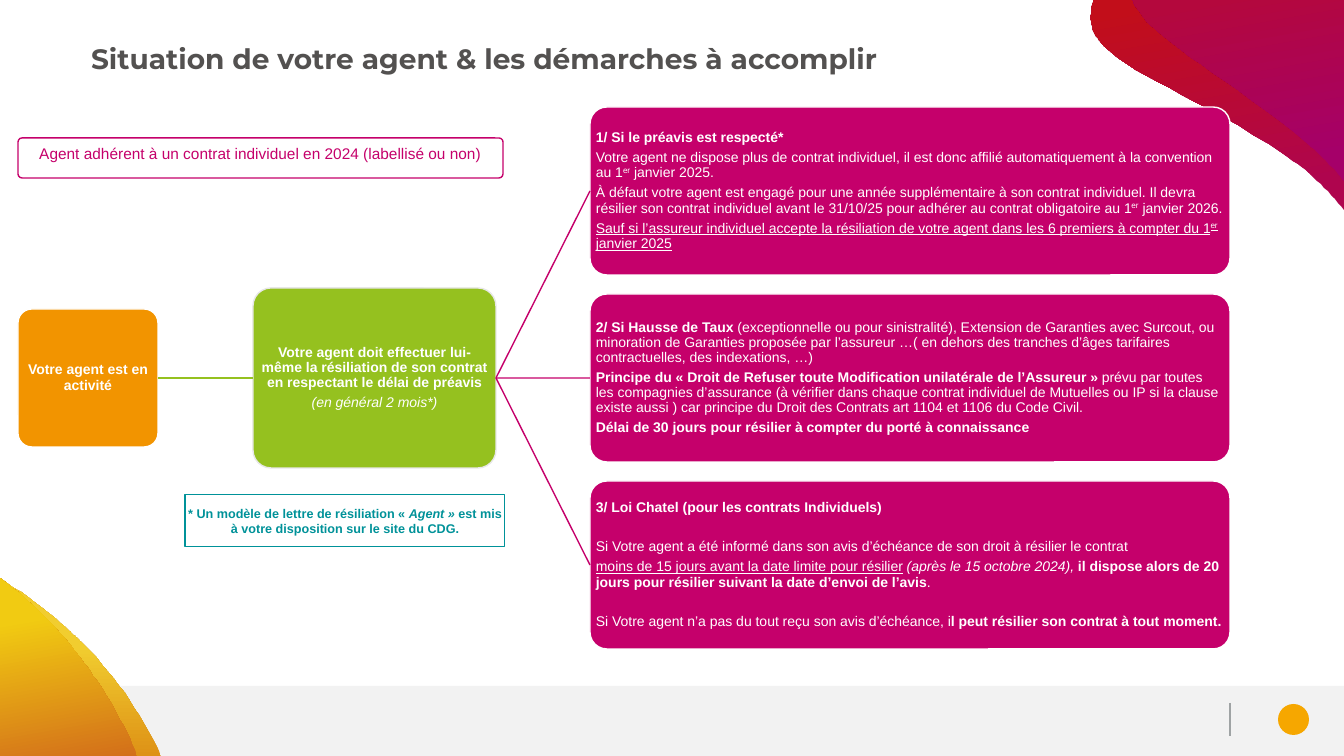
from lxml.etree import SubElement
from pptx import Presentation
from pptx.dml.color import RGBColor
from pptx.enum.shapes import MSO_CONNECTOR, MSO_SHAPE
from pptx.enum.text import MSO_ANCHOR, MSO_AUTO_SIZE, PP_ALIGN
from pptx.oxml.ns import qn
from pptx.util import Emu, Pt

SCALE = 914400 / 100.8  # EMU in one px
COLOURS = {
    "white": "FFFFFF", "title": "535150", "band": "F2F2F2", "divider": "9FA3A4",
    "orange": "F29400", "green": "95C11F", "green_edge": "E7E7E7",
    "magenta": "C5006B", "teal": "009299", "emblem": "F6A700",
    "wine": "AF054E", "red": "C20E1A", "purple": "A50069", "crimson": "B4083D",
    "amber": "DE9216", "gold": "F1CD2F", "rust": "D36F1A", "yellow": "F1CB12",
}

# Start point, Bezier segments, closing corner, gradient stops, clockwise angle
SWOOSHES = [
    ((1094, 0),
     [((1089, 17), (1091, 30), (1099, 40)),
      ((1125, 74), (1199, 96), (1285, 155)),
      ((1308, 170), (1328, 190), (1344, 210))],
     (1344, 0), (("wine", 0.13), ("red", 0.94)), 260),
    ((1133, 0),
     [((1134, 3), (1135, 6), (1137, 8)),
      ((1159, 45), (1229, 76), (1309, 145)),
      ((1322, 156), (1333, 168), (1344, 181))],
     (1344, 0), (("purple", 0.13), ("crimson", 0.94)), 260),
    ((161, 756),
     [((145, 721), (120, 681), (82, 643)),
      ((78, 639), (73, 635), (69, 631)),
      ((45, 609), (22, 592), (0, 579))],
     (0, 756), (("amber", 0), ("gold", 0.62)), 270),
    ((137, 756),
     [((125, 725), (106, 691), (79, 656)),
      ((75, 651), (72, 646), (68, 642)),
      ((45, 615), (22, 594), (0, 578))],
     (0, 756), (("rust", 0), ("yellow", 0.77)), 260),
]

# A span is (text, style): b bold, i italic, u underline, ^ superscript
ACTIVITY = [[("Votre agent est en activité", "b")]]
DUTY = [
    [("Votre agent doit effectuer lui-même la résiliation de son contrat "
      "en respectant le délai de préavis", "b")],
    [("(en général 2 mois*)", "i")],
]
NOTE = [[("* Un modèle de lettre de résiliation « ", "b"), ("Agent » ", "bi"),
         ("est mis à votre disposition sur le site du CDG.", "b")]]
LABEL = [[("Agent adhérent à un contrat individuel en 2024 (labellisé ou non)", "")]]
NOTICE_CASE = [
    [("1/ Si le préavis est respecté*", "b")],
    [("Votre agent ne dispose plus de contrat individuel, il est donc affilié "
      "automatiquement à la convention au 1", ""), ("er", "^"), (" janvier 2025.", "")],
    [("À défaut votre agent est engagé pour une année supplémentaire à son contrat "
      "individuel. Il devra résilier son contrat individuel avant le 31/10/25 pour "
      "adhérer au contrat obligatoire au 1", ""), ("er", "^"), (" janvier 2026.", "")],
    [("Sauf si l’assureur individuel accepte la résiliation de votre agent dans les "
      "6 premiers à compter du 1", "u"), ("er", "u^"), (" janvier 2025", "u")],
]
RATE_CASE = [
    [("2/ Si Hausse de Taux ", "b"),
     ("(exceptionnelle ou pour sinistralité), Extension de Garanties avec Surcout, ou "
      "minoration de Garanties proposée par l’assureur …( en dehors des tranches d’âges "
      "tarifaires contractuelles, des indexations, …)", "")],
    [("Principe du « Droit de Refuser toute Modification unilatérale de "
      "l’Assureur » ", "b"),
     ("prévu par toutes les compagnies d’assurance (à vérifier dans chaque contrat "
      "individuel de Mutuelles ou IP si la clause existe aussi ) car principe du Droit "
      "des Contrats art 1104 et 1106 du Code Civil.", "")],
    [("Délai de 30 jours pour résilier à compter du porté à connaissance", "b")],
]
CHATEL_CASE = [
    [("3/ Loi Chatel (pour les contrats Individuels)", "b")],
    [("Si Votre agent a été informé dans son avis d’échéance de son droit à résilier "
      "le contrat", "")],
    [("moins de 15 jours avant la date limite pour résilier", "u"), (" ", ""),
     ("(après le 15 octobre 2024),", "i"),
     (" il dispose alors de 20 jours pour résilier suivant la date d’envoi de l’avis", "b"),
     (".", "")],
    [("Si Votre agent n’a pas du tout reçu son avis d’échéance, i", ""),
     ("l peut résilier son contrat à tout moment.", "b")],
]
# Paragraphs, and the indexes of those set apart by a wider gap
CASES = [(NOTICE_CASE, ()), (RATE_CASE, ()), (CHATEL_CASE, (1, 3))]


def px(length):
    return Emu(round(length * SCALE))


def colour(name):
    return RGBColor.from_string(COLOURS[name])


def add_span(para, text, style, size, ink, font="Arial"):
    span = para.add_run()
    span.text = text
    span.font.name = font
    span.font.size = Pt(size)
    span.font.color.rgb = colour(ink)
    span.font.bold = "b" in style
    span.font.italic = "i" in style
    span.font.underline = "u" in style
    if "^" in style:
        span._r.get_or_add_rPr().set("baseline", "30000")


def add_box(page, bounds, fill=None, edge=None, edge_width=1, kind=MSO_SHAPE.RECTANGLE):
    box = page.shapes.add_shape(kind, *map(px, bounds))
    box.shadow.inherit = False
    if kind == MSO_SHAPE.ROUNDED_RECTANGLE:
        box.adjustments[0] = 0.1
    if fill:
        box.fill.solid()
        box.fill.fore_color.rgb = colour(fill)
    else:
        box.fill.background()
    if edge:
        box.line.color.rgb = colour(edge)
        box.line.width = Pt(edge_width)
    else:
        box.line.fill.background()
    return box


def write(box, paragraphs, size=10, ink="white", align=PP_ALIGN.CENTER, spacing=0.9,
          after=3.5, wide_gaps=(), inset=1, anchor=MSO_ANCHOR.MIDDLE):
    frame = box.text_frame
    frame.word_wrap = True
    frame.vertical_anchor = anchor
    frame.margin_left = frame.margin_right = px(inset)
    frame.margin_top = frame.margin_bottom = px(inset)
    for index, spans in enumerate(paragraphs):
        para = frame.add_paragraph() if index else frame.paragraphs[0]
        para.alignment = align
        para.line_spacing = spacing
        para.space_after = Pt(after)
        if index in wide_gaps:
            para.space_before = Pt(14)
        for text, style in spans:
            add_span(para, text, style, size, ink)


def add_line(page, ink, start=(0, 0), end=(0, 0)):
    line = page.shapes.add_connector(MSO_CONNECTOR.STRAIGHT, *map(px, start + end))
    line.line.color.rgb = colour(ink)
    line.line.width = Pt(1)
    SubElement(line._element.spPr, qn("a:effectLst"))
    return line


def join(page, left_box, right_box, ink):
    """Link the right side of one box to the left side of the other."""
    line = add_line(page, ink)
    line.begin_connect(left_box, 3)
    line.end_connect(right_box, 1)


def curve_points(start, segments, steps=16):
    """Sample a chain of cubic Bezier segments."""
    points = []
    for first, second, end in segments:
        for step in range(1, steps + 1):
            t = step / steps
            weights = ((1 - t) ** 3, 3 * t * (1 - t) ** 2, 3 * t * t * (1 - t), t ** 3)
            corners = (start, first, second, end)
            points.append(tuple(sum(w * corner[axis] for w, corner in zip(weights, corners))
                                for axis in (0, 1)))
        start = end
    return points


def add_swoosh(page, start, segments, corner, stops, angle):
    builder = page.shapes.build_freeform(*start, scale=SCALE)
    builder.add_line_segments(curve_points(start, segments) + [corner], close=True)
    swoosh = builder.convert_to_shape()
    swoosh.shadow.inherit = False
    swoosh.line.fill.background()
    swoosh.fill.gradient()
    swoosh.fill.gradient_angle = 360 - angle
    for stop, (name, position) in zip(swoosh.fill.gradient_stops, stops):
        stop.color.rgb = colour(name)
        stop.position = position


def set_title(page, text):
    title = page.shapes.title
    title.left, title.top, title.width, title.height = map(px, (81, 36, 996, 96))
    frame = title.text_frame
    frame.auto_size = MSO_AUTO_SIZE.NONE
    frame.word_wrap = True
    frame.vertical_anchor = MSO_ANCHOR.TOP
    para = frame.paragraphs[0]
    para.alignment = PP_ALIGN.LEFT
    add_span(para, text, "b", 20, "title", "Montserrat")


def main():
    deck = Presentation()
    deck.slide_width, deck.slide_height = px(1344), px(756)
    page = deck.slides.add_slide(deck.slide_layouts[5])
    rounded = MSO_SHAPE.ROUNDED_RECTANGLE

    add_box(page, (0, 686, 1344, 70), "band")
    add_box(page, (1278, 704, 31, 31), "emblem", kind=MSO_SHAPE.OVAL)
    add_line(page, "divider", (1230, 703), (1230, 736))
    for swoosh in SWOOSHES:
        add_swoosh(page, *swoosh)
    set_title(page, "Situation de votre agent & les démarches à accomplir")

    activity = add_box(page, (18, 309, 140, 138), "orange", "white", kind=rounded)
    write(activity, ACTIVITY)
    duty = add_box(page, (253, 288, 243, 180), "green", "green_edge", kind=rounded)
    write(duty, DUTY)
    join(page, activity, duty, "green")
    for row, (paragraphs, wide_gaps) in enumerate(CASES):
        case = add_box(page, (590, 107 + 187 * row, 640, 168), "magenta", "white", kind=rounded)
        write(case, paragraphs, align=PP_ALIGN.LEFT, wide_gaps=wide_gaps)
        join(page, duty, case, "magenta")

    note = add_box(page, (185, 495, 320, 52), edge="teal", edge_width=0.75)
    write(note, NOTE, size=9, ink="teal", spacing=1, after=0)
    label = add_box(page, (18, 138, 485, 40), edge="magenta", kind=rounded)
    write(label, LABEL, size=11, ink="magenta", spacing=1, after=0, inset=5,
          anchor=MSO_ANCHOR.TOP)
    deck.save("out.pptx")


if __name__ == "__main__":
    main()
